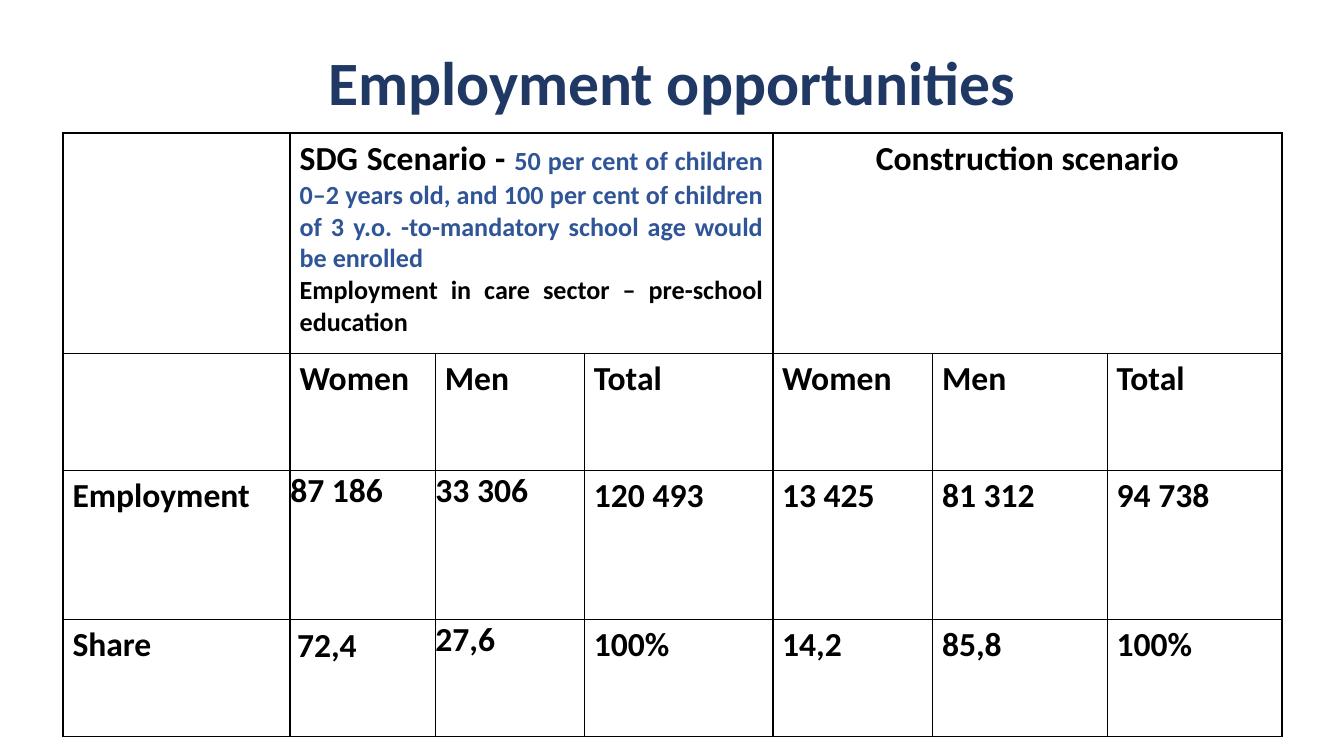
import pptx
import pptx.util
import pptx.dml.color
import pptx.enum.text
import pptx.oxml.ns
import lxml.etree

Inches = pptx.util.Inches
Pt = pptx.util.Pt
RGBColor = pptx.dml.color.RGBColor
ALIGN = pptx.enum.text.PP_ALIGN
ANCHOR = pptx.enum.text.MSO_ANCHOR
qn = pptx.oxml.ns.qn

NAVY = RGBColor(0x20, 0x38, 0x64)
BLUE = RGBColor(0x2F, 0x55, 0x97)
BLACK = RGBColor(0, 0, 0)
WHITE = RGBColor(0xFF, 0xFF, 0xFF)

COLS = [1.69, 1.08, 1.11, 1.4, 1.19, 1.3, 1.3]
ROWS = [1.64, 0.87, 1.11, 0.87]
HEADS = ["Women", "Men", "Total"]
DATA = [
    [""] + HEADS * 2,
    ["Employment", "87 186", "33 306", "120 493", "13 425", "81 312", "94 738"],
    ["Share", "72,4", "27,6", "100%", "14,2", "85,8", "100%"],
]
TIGHT = [(row, col) for row in (2, 3) for col in (1, 2)]


def write(para, text, size=18, color=BLACK, align=ALIGN.LEFT, space=1.0):
    para.alignment = align
    para.line_spacing = space
    run = para.add_run()
    run.text = text
    run.font.name = "Calibri"
    run.font.size = Pt(size)
    run.font.bold = True
    run.font.color.rgb = color


def style(cell, tight):
    side, edge = (0, 0) if tight else (0.07, 0.04)
    cell.margin_left = cell.margin_right = Inches(side)
    cell.margin_top = cell.margin_bottom = Inches(edge)
    props = cell._tc.get_or_add_tcPr()
    for name in ("a:lnL", "a:lnR", "a:lnT", "a:lnB"):
        line = lxml.etree.SubElement(props, qn(name), w=str(Pt(1)))
        fill = lxml.etree.SubElement(line, qn("a:solidFill"))
        lxml.etree.SubElement(fill, qn("a:srgbClr"), val=str(BLACK))
    cell.fill.solid()
    cell.fill.fore_color.rgb = WHITE


def add_title(slide, left, top, width, height):
    title = slide.shapes.title
    title.left, title.top = Inches(left), Inches(top)
    title.width, title.height = Inches(width), Inches(height)
    title.text_frame.vertical_anchor = ANCHOR.MIDDLE
    write(title.text_frame.paragraphs[0], "Employment opportunities",
          size=33, color=NAVY, align=ALIGN.CENTER, space=0.9)


def fill_heads(table):
    frame = table.cell(0, 1).text_frame
    para = frame.paragraphs[0]
    write(para, "SDG Scenario - ", align=ALIGN.JUSTIFY)
    write(para, "50 per cent of children 0–2 years old, and 100 per cent of "
          "children of 3 y.o. -to-mandatory school age would be enrolled ",
          size=14, color=BLUE, align=ALIGN.JUSTIFY)
    write(frame.add_paragraph(),
          "Employment in care sector – pre-school education ",
          size=14, align=ALIGN.JUSTIFY)
    write(table.cell(0, 4).text_frame.paragraphs[0],
          "Construction scenario", align=ALIGN.CENTER)


def add_grid(slide, left, top, width, height):
    table = slide.shapes.add_table(
        len(ROWS), len(COLS), Inches(left), Inches(top),
        Inches(width), Inches(height)).table
    table.first_row = table.horz_banding = False
    for col, size in zip(table.columns, COLS):
        col.width = Inches(size * width / sum(COLS))
    for row, size in zip(table.rows, ROWS):
        row.height = Inches(size * height / sum(ROWS))
    for row in range(len(ROWS)):
        for col in range(len(COLS)):
            style(table.cell(row, col), (row, col) in TIGHT)
    for col in (1, 4):
        table.cell(0, col).merge(table.cell(0, col + 2))
    fill_heads(table)
    for row, words in enumerate(DATA, 1):
        for col, text in enumerate(words):
            if text:
                para = table.cell(row, col).text_frame.paragraphs[0]
                shift = (row, col) == (3, 1)
                write(para, text, space=1.15 if shift else 1.0,
                      align=ALIGN.JUSTIFY if shift else ALIGN.LEFT)
                if shift:
                    para._p.get_or_add_pPr().set("marL", str(Inches(0.05)))


def main():
    deck = pptx.Presentation()
    deck.slide_width = Inches(10)
    deck.slide_height = deck.slide_width * 9 // 16
    slide = deck.slides.add_slide(deck.slide_layouts[5])
    add_title(slide, 0.69, 0.3, 8.62, 0.68)
    add_grid(slide, 0.47, 0.99, 9.07, 4.49)
    deck.save("out.pptx")


if __name__ == "__main__":
    main()
